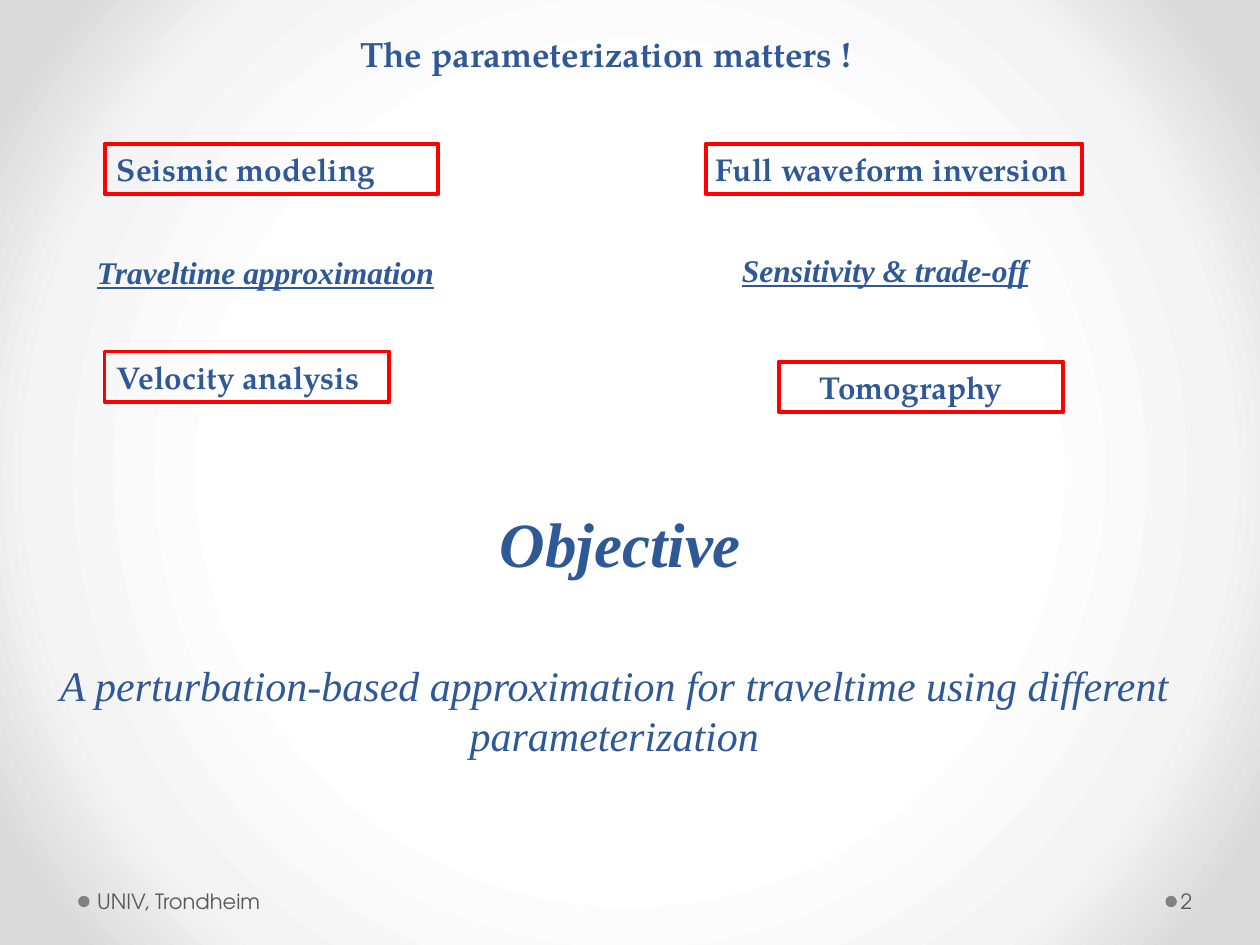
"""Build the slide on why parameterization matters for traveltime approximation."""
from pptx import Presentation
from pptx.dml.color import RGBColor
from pptx.enum.shapes import MSO_SHAPE as Shape
from pptx.enum.text import MSO_ANCHOR as Anchor, PP_ALIGN as Align
from pptx.oxml import parse_xml
from pptx.oxml.ns import nsdecls, qn
from pptx.util import Inches, Pt

COLORS = {
    "text": "2F5897", "frame": "FF0000", "footer": "595959", "dot": "808080",
    "center": "FFFFFF", "middle": "F4F4F4", "edge": "DADADA",
}
PAGELLA, TIMES, ADVENTOR = "TeX Gyre Pagella", "Times New Roman", "TeX Gyre Adventor"

deck = Presentation()
deck.slide_width, deck.slide_height = Inches(10), Inches(7.5)
slide = deck.slides.add_slide(deck.slide_layouts[6])


def add_text(box, text, size, font, color="text", bold=False, italic=False,
             underline=None, align=Align.LEFT, anchor=Anchor.TOP):
    frame = slide.shapes.add_textbox(*map(Inches, box)).text_frame
    frame.word_wrap = True
    frame.vertical_anchor = anchor
    paragraph = frame.paragraphs[0]
    paragraph.alignment = align
    run = paragraph.add_run()
    run.text = text
    run.font.size, run.font.name = Pt(size), font
    run.font.bold, run.font.italic, run.font.underline = bold, italic, underline
    run.font.color.rgb = RGBColor.from_string(COLORS[color])
    return frame


def add_outline(kind, box):
    outline = slide.shapes.add_shape(kind, *map(Inches, box))
    outline.shadow.inherit = False
    return outline


slide.background.fill.gradient()
gradient = slide.element.find(".//" + qn("a:gradFill"))
for part in list(gradient):
    gradient.remove(part)
stops = "".join(
    f'<a:gs pos="{percent * 1000}"><a:srgbClr val="{COLORS[name]}"/></a:gs>'
    for percent, name in ((50, "center"), (76, "middle"), (92, "edge")))
gradient.append(parse_xml(f'<a:gsLst {nsdecls("a")}>{stops}</a:gsLst>'))
gradient.append(parse_xml(
    f'<a:path {nsdecls("a")} path="circle">'
    '<a:fillToRect l="50000" t="50000" r="50000" b="50000"/></a:path>'))

for left in (9.25, 0.62):
    dot = add_outline(Shape.OVAL, (left, 7.11, 0.09, 0.09))
    dot.fill.solid()
    dot.fill.fore_color.rgb = RGBColor.from_string(COLORS["dot"])
    dot.line.fill.background()

for left, width, text, inset_left, inset_right in (
        (0.72, 3.11, "UNIV, Trondheim", 0.05, 0.1), (9.34, 0.61, "2", 0.03, 0.05)):
    footer = add_text((left, 6.95, width, 0.4), text, 12, ADVENTOR, "footer",
                      anchor=Anchor.MIDDLE)
    footer.margin_left, footer.margin_right = Inches(inset_left), Inches(inset_right)

objective = add_text((0.35, 3.75, 9.15, 1.07), "Objective", 36, TIMES,
                     bold=True, italic=True, align=Align.CENTER)
objective.paragraphs[0].line_spacing = Pt(58)
add_text((2.76, 0.21, 4.49, 0.44), "The parameterization matters !", 20, PAGELLA, bold=True)

for topic, top, text_left, text_width, frame_left, frame_width in (
        ("Velocity analysis", 2.79, 0.83, 2.26, 0.83, 2.26),
        ("Full waveform inversion", 1.14, 5.58, 3.31, 5.6, 2.99),
        ("Tomography", 2.87, 6.41, 1.87, 6.18, 2.26),
        ("Seismic modeling", 1.14, 0.83, 2.65, 0.83, 2.65)):
    add_text((text_left, top, text_width, 0.4), topic, 18, PAGELLA, bold=True)
    topic_frame = add_outline(Shape.RECTANGLE, (frame_left, top, frame_width, 0.4))
    topic_frame.fill.background()
    topic_frame.line.color.rgb = RGBColor.from_string(COLORS["frame"])
    topic_frame.line.width = Pt(2.25)

add_text((0.07, 4.82, 9.61, 1.26),
         "A perturbation-based approximation for traveltime using different parameterization",
         24, TIMES, italic=True, align=Align.CENTER, anchor=Anchor.BOTTOM)

for left, top, heading in ((0.67, 1.96, "Traveltime approximation"),
                           (5.79, 1.94, "Sensitivity & trade-off")):
    add_text((left, top, 3.15, 0.4), heading, 18, TIMES,
             bold=True, italic=True, underline=True)

deck.save("out.pptx")
